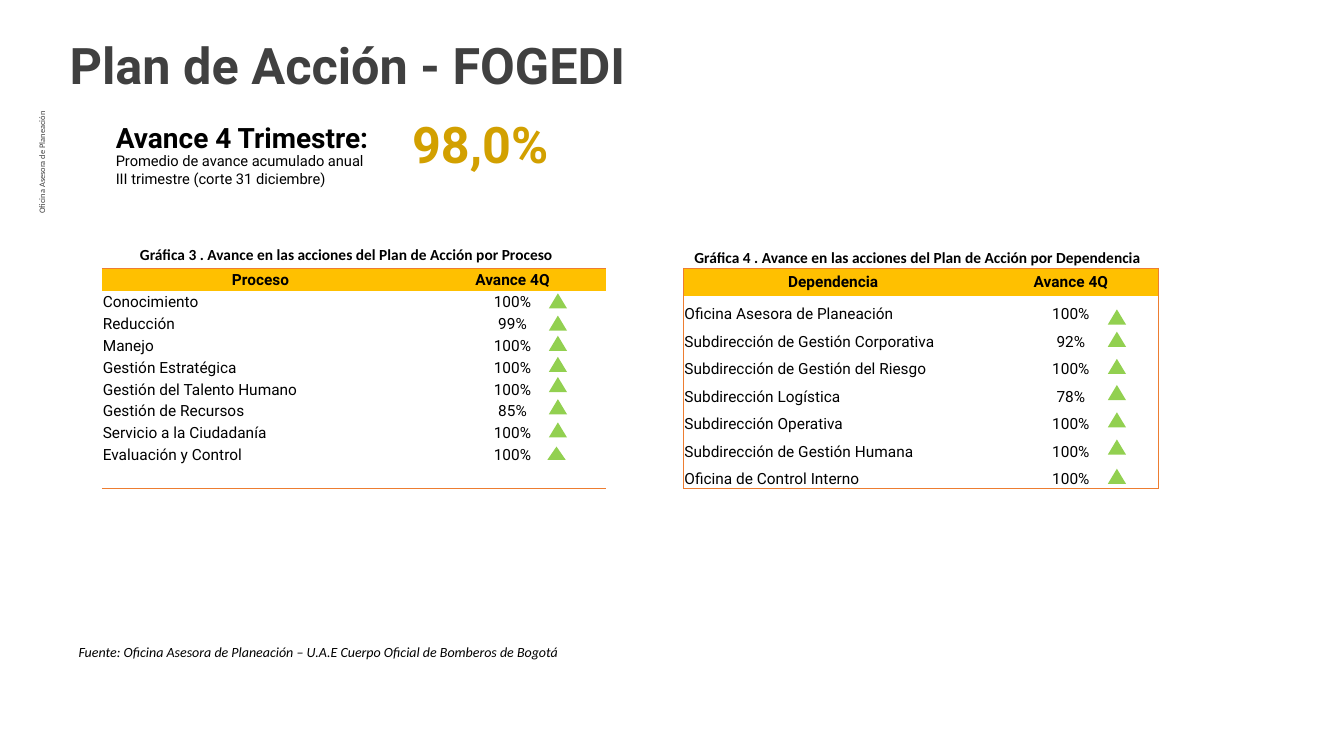
from lxml import etree
from pptx import Presentation
from pptx import util as u
from pptx.dml.color import RGBColor
from pptx.enum import shapes, text
from pptx.oxml import ns

NO_GRID_STYLE = "{2D5ABB26-0587-4C30-8999-92F81FD0307C}"
LEFT, CENTER, RIGHT = text.PP_ALIGN.LEFT, text.PP_ALIGN.CENTER, text.PP_ALIGN.RIGHT
TOP, MIDDLE, BOTTOM = text.MSO_ANCHOR.TOP, text.MSO_ANCHOR.MIDDLE, text.MSO_ANCHOR.BOTTOM


def color(value):
    return RGBColor.from_string(value)


def write(frame, content, font="Roboto", size=11, ink="000000", bold=False,
          italic=False, align=LEFT):
    """Put each line of content in its own paragraph."""
    for index, line in enumerate(content.split("\n")):
        paragraph = frame.add_paragraph() if index else frame.paragraphs[0]
        paragraph.alignment = align
        if not line:
            end = etree.SubElement(paragraph._p, ns.qn("a:endParaRPr"))
            end.set("sz", str(size * 100))
            continue
        run = paragraph.add_run()
        run.text = line
        run.font.name, run.font.size = font, u.Pt(size)
        run.font.bold, run.font.italic = bold, italic
        run.font.color.rgb = color(ink)


class Page:
    gold, orange, green, gray = "FFC000", "ED7D31", "92D050", "404040"

    def __init__(self, presentation):
        self.slide = presentation.slides.add_slide(presentation.slide_layouts[5])

    def title(self, content, left, top, width, height, **style):
        shape = self.slide.shapes.title
        shape.left, shape.top = u.Pt(left), u.Pt(top)
        shape.width, shape.height = u.Pt(width), u.Pt(height)
        frame = shape.text_frame
        frame.auto_size = text.MSO_AUTO_SIZE.NONE
        frame.vertical_anchor = TOP
        write(frame, content, **style)

    def label(self, content, left, top, width, height, rotation=0,
              insets=(7.2, 3.6), **style):
        shape = self.slide.shapes.add_textbox(
            u.Pt(left), u.Pt(top), u.Pt(width), u.Pt(height))
        shape.rotation = rotation
        frame = shape.text_frame
        frame.word_wrap = True
        frame.margin_left = frame.margin_right = u.Pt(insets[0])
        frame.margin_top = frame.margin_bottom = u.Pt(insets[1])
        write(frame, content, **style)

    def border(self, cell, sides, width):
        properties = cell._tc.get_or_add_tcPr()
        lines = []
        for side in sides:
            line = etree.Element(ns.qn(f"a:ln{side}"), w=str(u.Pt(width)))
            fill = etree.SubElement(line, ns.qn("a:solidFill"))
            etree.SubElement(fill, ns.qn("a:srgbClr"), val=self.orange)
            lines.append(line)
        properties[0:0] = lines

    def table(self, rows, left, top, widths, heights, anchor, line, framed):
        frame = self.slide.shapes.add_table(
            len(rows), len(widths), u.Pt(left), u.Pt(top),
            u.Pt(sum(widths)), u.Pt(sum(heights)))
        table = frame.table
        table.horz_banding = False
        for style in frame.element.iter(ns.qn("a:tableStyleId")):
            style.text = NO_GRID_STYLE
        for column, width in zip(table.columns, widths):
            column.width = u.Pt(width)
        for r, (values, height) in enumerate(zip(rows, heights)):
            table.rows[r].height = u.Pt(height)
            for c, value in enumerate(values):
                cell = table.cell(r, c)
                cell.margin_left = cell.margin_right = cell.margin_top = u.Pt(0.72)
                cell.margin_bottom = 0
                cell.vertical_anchor = anchor if r else MIDDLE
                if r:
                    cell.fill.background()
                else:
                    cell.fill.solid()
                    cell.fill.fore_color.rgb = color(self.gold)
                write(cell.text_frame, value, bold=r == 0,
                      align=LEFT if r and c == 0 else CENTER)
                edges = {"L": framed and c == 0, "R": framed and c == 1,
                         "T": r == 0, "B": r == len(rows) - 1}
                self.border(cell, [side for side, on in edges.items() if on], line)

    def triangle(self, left, top, width=13, height=10.8):
        shape = self.slide.shapes.add_shape(
            shapes.MSO_SHAPE.ISOSCELES_TRIANGLE,
            u.Pt(left), u.Pt(top), u.Pt(width), u.Pt(height))
        shape.shadow.inherit = False
        shape.fill.solid()
        shape.fill.fore_color.rgb = color(self.green)
        shape.line.fill.background()


def main():
    presentation = Presentation()
    presentation.slide_width, presentation.slide_height = u.Pt(960), u.Pt(540)
    page = Page(presentation)

    # Heading and margin label
    page.title("Plan de Acción - FOGEDI", 42.5, 20.9, 767.5, 51,
               size=36, ink=page.gray, bold=True)
    page.label("Oficina Asesora de Planeación", -63.4, 161.3, 186.5, 13,
               rotation=270, insets=(5, 2.9), font="Calibri", size=6,
               ink=page.gray, align=RIGHT)

    # Headline figure
    page.label("Avance 4 Trimestre:", 75.6, 82.8, 217.4, 31.7, size=20, bold=True)
    page.label("98,0%", 287.3, 77, 139, 51, size=36, ink="D2A000", bold=True)
    page.label("Promedio de avance acumulado anual\nIII trimestre (corte 31 diciembre)",
               75.6, 105.1, 203, 32.4, size=10.5)

    # Progress by process
    processes = [("Proceso", "Avance 4Q"), ("Conocimiento", "100%"),
                 ("Reducción", "99%"), ("Manejo", "100%"),
                 ("Gestión Estratégica", "100%"),
                 ("Gestión del Talento Humano", "100%"),
                 ("Gestión de Recursos", "85%"),
                 ("Servicio a la Ciudadanía", "100%"),
                 ("Evaluación y Control", "100%"), ("", "")]
    page.label("Gráfica 3 . Avance en las acciones del Plan de Acción por Proceso",
               92.9, 171.4, 356.4, 20.9, font="Calibri", bold=True)
    page.table(processes, 72.7, 191.5, (226.8, 133.2), [16.4] + [15.6] * 8 + [16.5],
               MIDDLE, line=1, framed=False)
    for top in (209.5, 225.4, 239.8, 254.9, 269.3, 285.1, 301.7):
        page.triangle(392, top)
    page.triangle(391, 319, height=9.4)

    # Progress by department
    departments = [("Dependencia", "Avance 4Q"),
                   ("Oficina Asesora de Planeación", "100%"),
                   ("Subdirección de Gestión Corporativa", "92%"),
                   ("Subdirección de Gestión del Riesgo", "100%"),
                   ("Subdirección Logística", "78%"),
                   ("Subdirección Operativa", "100%"),
                   ("Subdirección de Gestión Humana", "100%"),
                   ("Oficina de Control Interno", "100%")]
    page.label("Gráfica 4 . Avance en las acciones del Plan de Acción por Dependencia",
               488.9, 173.5, 402.5, 20.9, font="Calibri", bold=True)
    page.table(departments, 488.2, 191.5, (214, 125.5), [19.7] * 8,
               BOTTOM, line=0.5, framed=True)
    for top in (221, 236.9, 256.3, 275, 294.5, 313.9, 334.8):
        page.triangle(791.3, top)

    # Source line
    page.label("Fuente: Oficina Asesora de Planeación – U.A.E Cuerpo Oficial de "
               "Bomberos de Bogotá", 49, 455.8, 480, 19.4,
               font="Calibri", size=10, italic=True)

    presentation.save("out.pptx")


if __name__ == "__main__":
    main()
